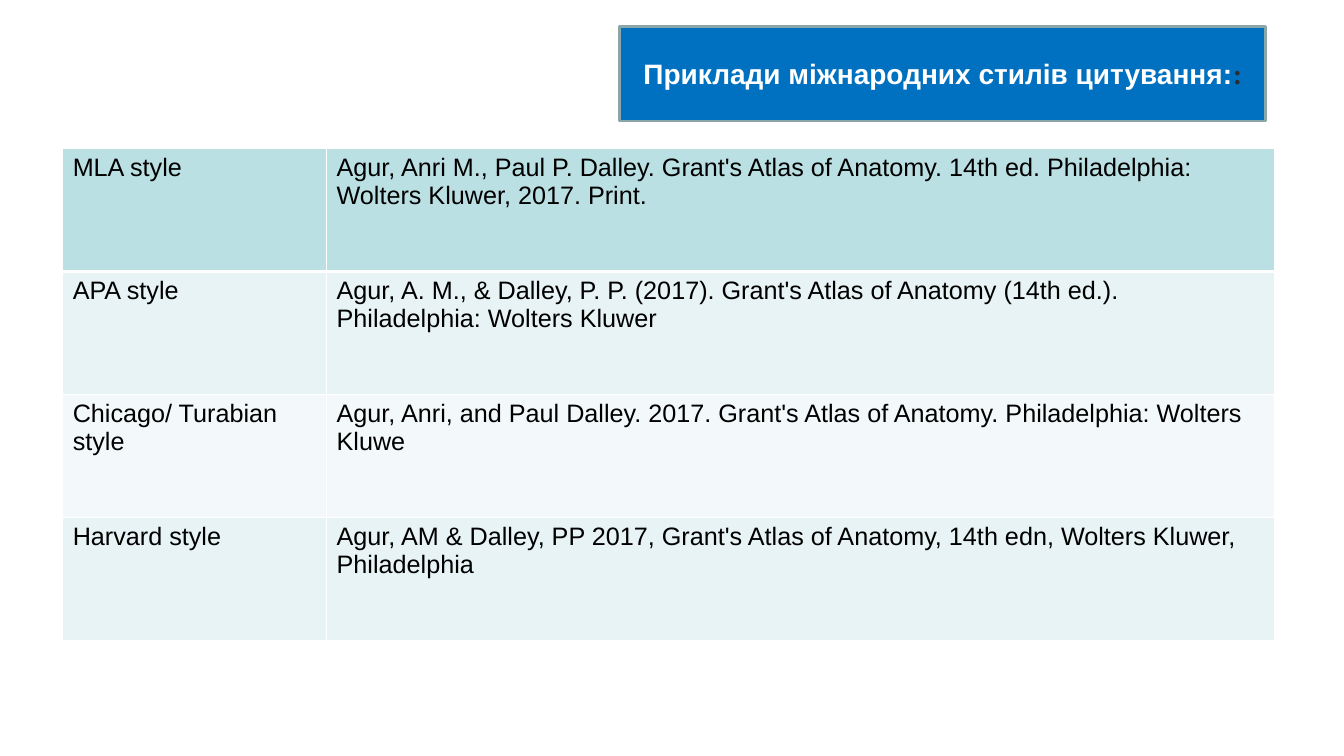
from lxml import etree
from pptx import Presentation
from pptx.dml.color import RGBColor
from pptx.enum.shapes import MSO_SHAPE
from pptx.enum.text import MSO_ANCHOR, PP_ALIGN
from pptx.oxml.ns import qn
from pptx.util import Cm, Pt

RECT = MSO_SHAPE.RECTANGLE
MIDDLE = MSO_ANCHOR.MIDDLE
CENTER = PP_ALIGN.CENTER

TITLE = [
    ("Приклади міжнародних стилів цитування:", "Arial", "white"),
    (":", "Times New Roman", "dark"),
]
STYLES = [
    ("MLA style", "Agur, Anri M., Paul P. Dalley. Grant's Atlas of Anatomy. "
     "14th ed. Philadelphia: Wolters Kluwer, 2017. Print."),
    ("APA style", "Agur, A. M., & Dalley, P. P. (2017). Grant's Atlas of "
     "Anatomy (14th ed.). Philadelphia: Wolters Kluwer"),
    ("Chicago/ Turabian style", "Agur, Anri, and Paul Dalley. 2017. Grant's "
     "Atlas of Anatomy. Philadelphia: Wolters Kluwe"),
    ("Harvard style", "Agur, AM & Dalley, PP 2017, Grant's Atlas of Anatomy, "
     "14th edn, Wolters Kluwer, Philadelphia"),
]
COLORS = {
    "white": "FFFFFF", "black": "000000", "dark": "2C2C2C",
    "blue": "0070C0", "edge": "8AA6A8",
    "head": "BBE0E3", "odd": "E7F3F4", "even": "F3F9FA",
}
WIDTHS = [6.65, 23.9]
ROW = 3.1


def rgb(name):
    return RGBColor.from_string(COLORS[name])


def add_title(slide):
    box = slide.shapes.add_shape(RECT, Cm(15.62), Cm(0.66), Cm(16.28), Cm(2.39))
    box.shadow.inherit = False
    box.fill.solid()
    box.fill.fore_color.rgb = rgb("blue")
    box.line.color.rgb = rgb("edge")
    box.line.width = Pt(2)
    frame = box.text_frame
    frame.word_wrap = True
    frame.vertical_anchor = MIDDLE
    para = frame.paragraphs[0]
    para.alignment = CENTER
    para.font.size = Pt(20)
    para.font.bold = True
    for text, font, color in TITLE:
        run = para.add_run()
        run.text = text
        run.font.name = font
        run.font.color.rgb = rgb(color)


def set_edges(cell, top, bottom):
    """Draw white cell borders; top and bottom are widths in points."""
    props = cell._tc.get_or_add_tcPr()
    edges = [("a:lnL", 1), ("a:lnR", 1), ("a:lnT", top), ("a:lnB", bottom)]
    for spot, (tag, width) in enumerate(edges):
        line = etree.Element(qn(tag), w=str(Pt(width)))
        fill = etree.SubElement(line, qn("a:solidFill"))
        etree.SubElement(fill, qn("a:srgbClr"), val=COLORS["white"])
        props.insert(spot, line)


def add_styles(slide):
    count = len(STYLES)
    table = slide.shapes.add_table(
        count, len(WIDTHS), Cm(1.58), Cm(3.74),
        Cm(sum(WIDTHS)), Cm(ROW * count)).table
    for col, width in zip(table.columns, WIDTHS):
        col.width = Cm(width)
    for r, texts in enumerate(STYLES):
        table.rows[r].height = Cm(ROW)
        shade = "head" if r == 0 else "odd" if r % 2 else "even"
        for c, text in enumerate(texts):
            cell = table.cell(r, c)
            cell.fill.solid()
            cell.fill.fore_color.rgb = rgb(shade)
            set_edges(cell, 3 if r == 1 else 1, 3 if r == 0 else 1)
            cell.text = text
            font = cell.text_frame.paragraphs[0].font
            font.name = "Arial"
            font.size = Pt(18)
            font.bold = False
            font.color.rgb = rgb("black")


def main():
    deck = Presentation()
    deck.slide_width = Cm(33.87)
    deck.slide_height = Cm(19.05)
    slide = deck.slides.add_slide(deck.slide_layouts[6])
    add_title(slide)
    add_styles(slide)
    deck.save("out.pptx")


if __name__ == "__main__":
    main()
